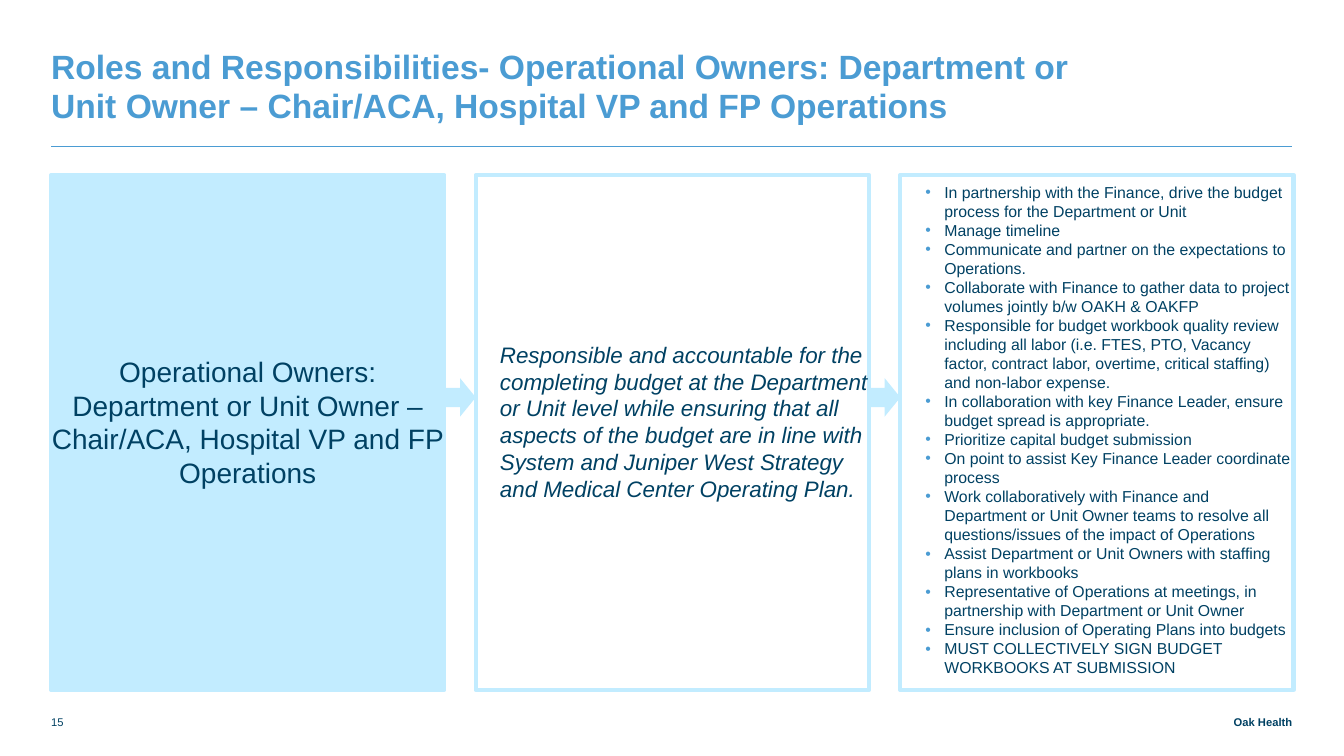
"""Build the slide on the roles and responsibilities of operational owners."""
from lxml.etree import SubElement
from pptx import Presentation
from pptx.dml.color import RGBColor
from pptx.enum.shapes import MSO_CONNECTOR, MSO_SHAPE
from pptx.enum.text import MSO_ANCHOR, PP_ALIGN
from pptx.oxml.ns import qn
from pptx.util import Cm, Pt

NAVY = RGBColor(0x00, 0x41, 0x63)
BLUE = RGBColor(0x4B, 0x9C, 0xD3)
PALE_BLUE = RGBColor(0xC2, 0xEC, 0xFF)

LEFT = Cm(1.29)
RIGHT = Cm(32.57)
PANEL_TOP = Cm(4.41)
PANEL_WIDTH = Cm(9.91)
PANEL_HEIGHT = Cm(12.98)
PANEL_PITCH = Cm(10.7)
FOOTER_TOP = Cm(17.78)
FOOTER_HEIGHT = Cm(0.58)

TITLE = (
    "Roles and Responsibilities- Operational Owners: Department or Unit Owner"
    " – Chair/ACA, Hospital VP and FP Operations"
)
OWNER = (
    "Operational Owners: Department or Unit Owner –"
    " Chair/ACA, Hospital VP and FP Operations"
)
ACCOUNTABILITY = (
    "Responsible and accountable for the completing budget at the Department"
    " or Unit level while ensuring that all aspects of the budget are in line"
    " with System and Juniper West Strategy and Medical Center Operating Plan."
)
DUTIES = [
    "In partnership with the Finance, drive the budget process for the Department or Unit",
    "Manage timeline",
    "Communicate and partner on the expectations to Operations.",
    "Collaborate with Finance to gather data to project volumes jointly b/w OAKH & OAKFP",
    "Responsible for budget workbook quality review including all labor (i.e. FTES, PTO,"
    " Vacancy factor, contract labor, overtime, critical staffing) and non-labor expense.",
    "In collaboration with key Finance Leader, ensure budget spread is appropriate.",
    "Prioritize capital budget submission",
    "On point to assist Key Finance Leader coordinate process",
    "Work collaboratively with Finance and Department or Unit Owner teams to resolve all"
    " questions/issues of the impact of Operations",
    "Assist Department or Unit Owners with staffing plans in workbooks",
    "Representative of Operations at meetings, in partnership with Department or Unit Owner",
    "Ensure inclusion of Operating Plans into budgets",
    "MUST COLLECTIVELY SIGN BUDGET WORKBOOKS AT SUBMISSION",
]


def apply_format(target, values):
    """Set each attribute named in values on the target."""
    for name, value in values.items():
        setattr(target, name, value)


def add_bullet(paragraph):
    """Give the paragraph a hanging blue bullet."""
    properties = paragraph._p.get_or_add_pPr()
    properties.set("marL", str(Cm(1.11)))
    properties.set("indent", str(-Cm(0.48)))
    colour = SubElement(properties, qn("a:buClr"))
    SubElement(colour, qn("a:srgbClr"), val=str(BLUE))
    SubElement(properties, qn("a:buFont"), typeface="Arial")
    SubElement(properties, qn("a:buChar"), char="•")


def write_text(shape, lines, frame_format, paragraph_format, font_format, bulleted=False):
    """Fill the shape with one formatted paragraph for each line."""
    frame = shape.text_frame
    margins = dict.fromkeys(
        ("margin_left", "margin_top", "margin_right", "margin_bottom"), 0
    )
    apply_format(frame, {"word_wrap": True, **margins, **frame_format})
    for index, line in enumerate(lines):
        paragraph = frame.add_paragraph() if index else frame.paragraphs[0]
        apply_format(paragraph, paragraph_format)
        if bulleted:
            add_bullet(paragraph)
        run = paragraph.add_run()
        run.text = line
        colour = font_format.get("rgb", NAVY)
        styles = {key: value for key, value in font_format.items() if key != "rgb"}
        apply_format(run.font, {"name": "Arial", **styles})
        run.font.color.rgb = colour


def add_label(slide, box, text, paragraph_format, font_format):
    """Add a bottom-anchored text box."""
    label = slide.shapes.add_textbox(*box)
    anchor = {"vertical_anchor": MSO_ANCHOR.BOTTOM}
    write_text(label, [text], anchor, paragraph_format, font_format)


def add_filled(slide, preset, box):
    """Add a preset shape filled with pale blue and without an outline."""
    shape = slide.shapes.add_shape(preset, *box)
    shape.shadow.inherit = False
    shape.fill.solid()
    shape.fill.fore_color.rgb = PALE_BLUE
    shape.line.fill.background()
    return shape


def add_panel(slide, column, filled=False):
    """Add the outlined panel of the given column."""
    box = (LEFT + column * PANEL_PITCH, PANEL_TOP, PANEL_WIDTH, PANEL_HEIGHT)
    panel = add_filled(slide, MSO_SHAPE.RECTANGLE, box)
    if not filled:
        panel.fill.background()
    panel.line.color.rgb = PALE_BLUE
    panel.line.width = Pt(3)
    return panel


def add_arrow(slide, column):
    """Add the arrow that fills the gap after the given column."""
    left = LEFT + column * PANEL_PITCH + PANEL_WIDTH
    box = (left, Cm(9.53), PANEL_PITCH - PANEL_WIDTH, Cm(0.97))
    add_filled(slide, MSO_SHAPE.RIGHT_ARROW, box)


def add_rule(slide, top):
    """Add the thin line under the title."""
    rule = slide.shapes.add_connector(MSO_CONNECTOR.STRAIGHT, LEFT, top, RIGHT, top)
    rule.line.color.rgb = BLUE
    rule.line.width = Pt(0.5)
    SubElement(rule._element.spPr, qn("a:effectLst"))


def main():
    """Build and save the slide."""
    deck = Presentation()
    apply_format(deck, {"slide_width": Cm(33.87), "slide_height": Cm(19.05)})
    slide = deck.slides.add_slide(deck.slide_layouts[6])

    add_label(slide, (LEFT, Cm(1.15), Cm(25.9), Cm(2)), TITLE,
              {"line_spacing": Pt(28)}, {"size": Pt(24), "bold": True, "rgb": BLUE})
    add_rule(slide, Cm(3.68))

    body = {"alignment": PP_ALIGN.LEFT}
    top = {"vertical_anchor": MSO_ANCHOR.TOP}
    write_text(add_panel(slide, 0, filled=True), [OWNER],
               {**top, "margin_top": Cm(4.53)},
               {"alignment": PP_ALIGN.CENTER}, {"size": Pt(20)})
    write_text(add_panel(slide, 1), [ACCOUNTABILITY],
               {**top, "margin_top": Cm(4.18), "margin_left": Cm(0.61)},
               body, {"size": Pt(16), "italic": True})
    write_text(add_panel(slide, 2), DUTIES, {**top, "margin_top": Cm(0.2)},
               body, {"size": Pt(11.3)}, bulleted=True)
    for column in range(2):
        add_arrow(slide, column)

    add_label(slide, (LEFT, FOOTER_TOP, Cm(1.17), FOOTER_HEIGHT), "15",
              {"alignment": PP_ALIGN.LEFT}, {"size": Pt(8)})
    brand_width = Cm(4.17)
    add_label(slide, (RIGHT - brand_width, FOOTER_TOP, brand_width, FOOTER_HEIGHT),
              "Oak Health", {"alignment": PP_ALIGN.RIGHT},
              {"size": Pt(8), "bold": True})
    deck.save("out.pptx")


if __name__ == "__main__":
    main()
